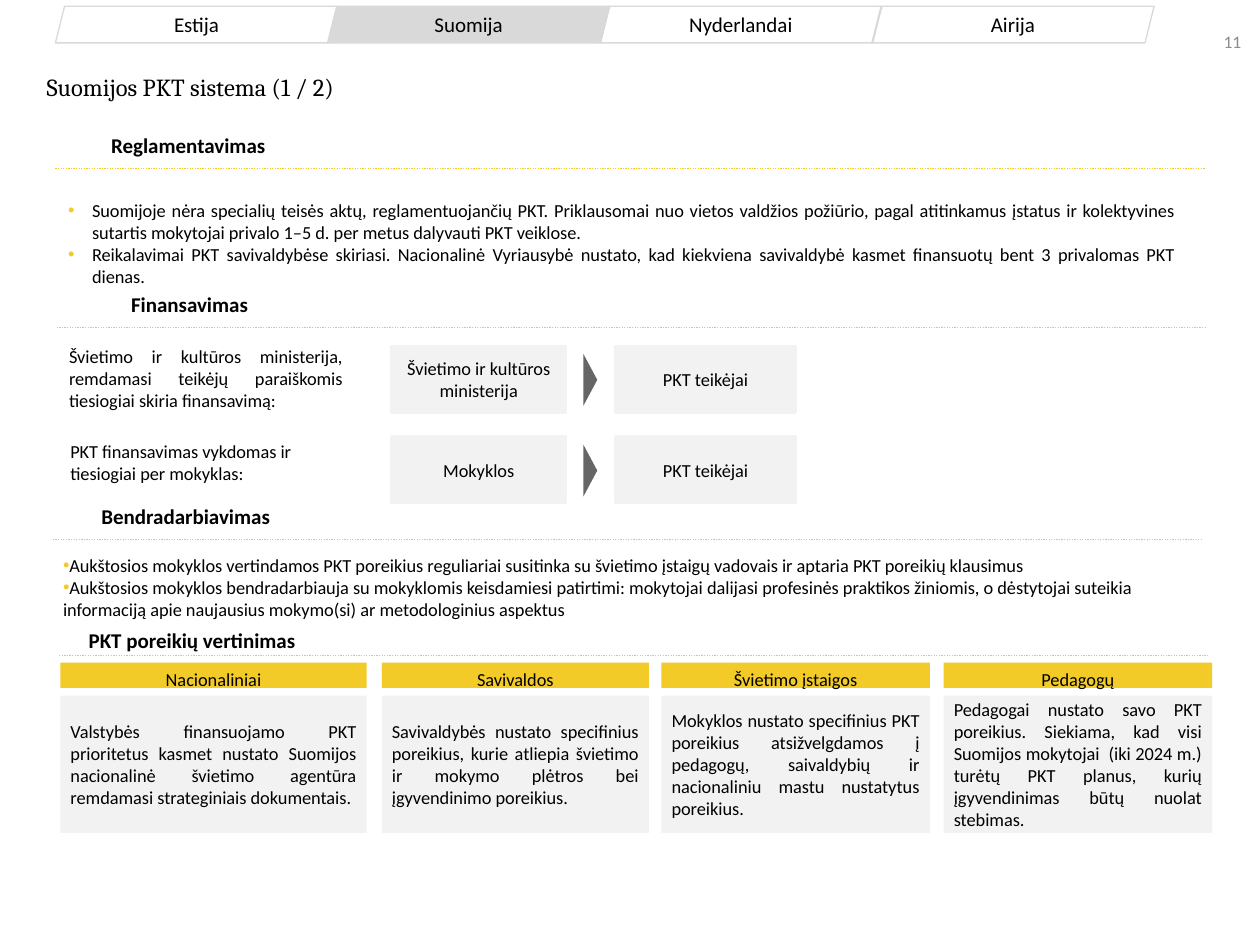
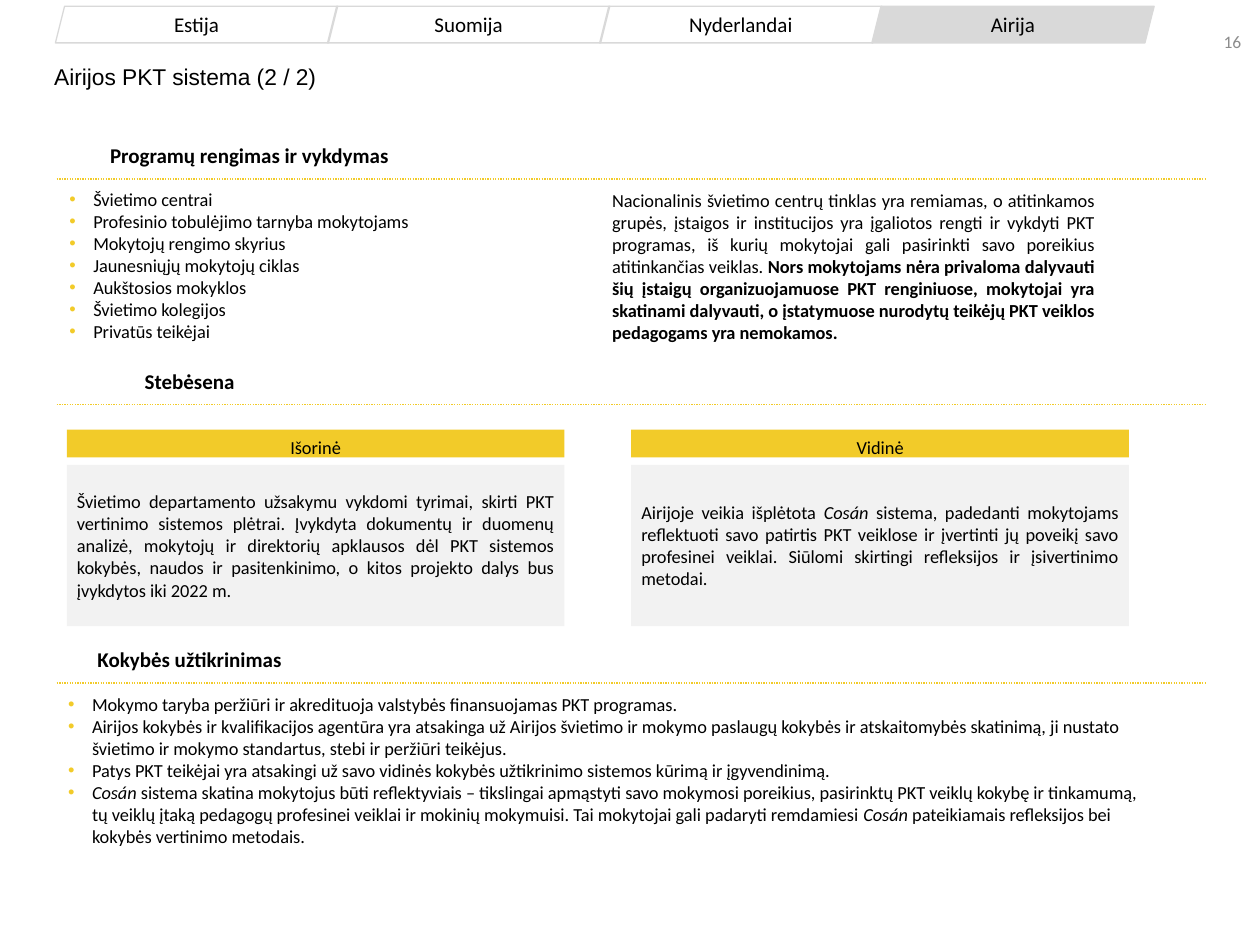
from lxml import etree
from pptx import Presentation
from pptx.dml.color import RGBColor
from pptx.enum.dml import MSO_LINE
from pptx.enum.shapes import MSO_CONNECTOR, MSO_SHAPE
from pptx.enum.text import MSO_ANCHOR, MSO_AUTO_SIZE, PP_ALIGN
from pptx.oxml.ns import qn
from pptx.util import Inches, Pt

LEFT, CENTER, RIGHT, JUSTIFY = PP_ALIGN.LEFT, PP_ALIGN.CENTER, PP_ALIGN.RIGHT, PP_ALIGN.JUSTIFY
TOP, MIDDLE = MSO_ANCHOR.TOP, MSO_ANCHOR.MIDDLE
RECT, TAB, TRIANGLE = MSO_SHAPE.RECTANGLE, MSO_SHAPE.PARALLELOGRAM, MSO_SHAPE.ISOSCELES_TRIANGLE
STRAIGHT, DOTTED, NO_FIT = MSO_CONNECTOR.STRAIGHT, MSO_LINE.ROUND_DOT, MSO_AUTO_SIZE.NONE

BLACK, WHITE, YELLOW = "000000", "FFFFFF", "F2CB29"
PALE, SILVER, GREY, DARK = "F2F2F2", "D9D9D9", "8C8C8C", "666666"
COUNTRIES = ["Estija", "Suomija", "Nyderlandai", "Airija"]


def color(value):
    return RGBColor.from_string(value)


class Deck:
    font, body_size, head_size = "Calibri", 10.5, 12

    def __init__(self):
        self.prs = Presentation()
        self.prs.slide_width, self.prs.slide_height = Inches(10), Inches(7.5)
        self.s = None

    def slide(self, number, country, title, left, top, width, font, size):
        self.s = self.prs.slides.add_slide(self.prs.slide_layouts[3])
        self.text(9.53, 0.13, 0.42, 0.4, [str(number)], RIGHT, MIDDLE, size=10, ink=GREY)
        for i, name in enumerate(COUNTRIES):
            fill = SILVER if name == country else None
            tab = self.shape(TAB, 0.44 + 2.16 * i, 0.05, 2.24, 0.29, fill, SILVER, 0.75)
            self.set_text(tab, [name], CENTER, MIDDLE, size=self.head_size)
        sp = self.place(self.s.shapes.title, left, top, width, 0.54)
        self.set_text(sp, [title], JUSTIFY, size=size, font=font)
        sp.text_frame.margin_left = 0

    def place(self, sp, left, top, width, height):
        sp.left, sp.top = Inches(left), Inches(top)
        sp.width, sp.height = Inches(width), Inches(height)
        self.s.shapes.element.append(sp.element)
        return sp

    def set_text(self, sp, paragraphs, align=LEFT, anchor=TOP, size=body_size, ink=BLACK,
                 bold=False, font=font, inset=None):
        tf = sp.text_frame
        tf.word_wrap, tf.auto_size, tf.vertical_anchor = True, NO_FIT, anchor
        if inset is not None:
            tf.margin_left = tf.margin_right = tf.margin_top = tf.margin_bottom = Inches(inset)
        for i, pieces in enumerate(paragraphs):
            p = tf.paragraphs[0] if i == 0 else tf.add_paragraph()
            p.alignment, p.space_before = align, Pt(0)
            for piece in [pieces] if isinstance(pieces, str) else pieces:
                words, style = (piece, "") if isinstance(piece, str) else piece
                r = p.add_run()
                r.text = words
                r.font.name, r.font.size = font, Pt(size)
                r.font.bold, r.font.italic = bold or style == "bold", style == "italic"
                r.font.color.rgb = color(ink)

    def shape(self, kind, left, top, width, height, fill=None, line=None, weight=0):
        sp = self.s.shapes.add_shape(kind, Inches(left), Inches(top), Inches(width), Inches(height))
        sp.shadow.inherit = False
        if fill:
            sp.fill.solid()
            sp.fill.fore_color.rgb = color(fill)
        else:
            sp.fill.background()
        if line:
            sp.line.color.rgb, sp.line.width = color(line), Pt(weight)
        else:
            sp.line.fill.background()
        return sp

    def text(self, left, top, width, height, paragraphs, *args, **style):
        sp = self.s.shapes.add_textbox(Inches(left), Inches(top), Inches(width), Inches(height))
        self.set_text(sp, paragraphs, *args, **style)

    def bullets(self, slot, left, top, width, height, items, align=LEFT, margin=0.19, hang=0.19):
        sp = self.place(self.s.placeholders[slot], left, top, width, height)
        self.set_text(sp, items, align)
        for p in sp.text_frame.paragraphs:
            pPr = p._p.get_or_add_pPr()
            pPr.set("marL", str(Inches(margin)))
            pPr.set("indent", str(-Inches(hang)))
            tint = etree.SubElement(pPr, qn("a:buClr"))
            etree.SubElement(tint, qn("a:srgbClr"), val=YELLOW)
            etree.SubElement(pPr, qn("a:buFont"), typeface="Arial")
            etree.SubElement(pPr, qn("a:buChar"), char="•")

    def section(self, title, left, top, width=2.13, height=0.43, rule=0.4):
        sp = self.shape(RECT, left, top, width, height, WHITE)
        self.set_text(sp, [title], CENTER, MIDDLE, size=self.head_size, bold=True)
        x, y = Inches(left + 0.01), Inches(top + rule)
        line = self.s.shapes.add_connector(STRAIGHT, x, y, x + Inches(9.13), y)
        line.line.color.rgb, line.line.width = color(YELLOW), Pt(0.75)
        line.line.dash_style = DOTTED
        etree.SubElement(line.element.spPr, qn("a:effectLst"))

    def card(self, left, top, width, caption_height, body_height, caption, body):
        head = self.shape(RECT, left, top, width, caption_height, YELLOW)
        self.set_text(head, [caption], CENTER, MIDDLE, inset=0.08)
        head.text_frame.paragraphs[0].line_spacing = Pt(17)
        box = self.shape(RECT, left, top + caption_height + 0.06, width, body_height, PALE)
        self.set_text(box, [body], JUSTIFY, MIDDLE, inset=0.08)

    def flow(self, top, source, target):
        for left, width, name in [(3.11, 1.38, source), (4.89, 1.42, target)]:
            sp = self.shape(RECT, left, top, width, 0.52, PALE, PALE, 2)
            self.set_text(sp, [name], CENTER, MIDDLE)
        self.shape(TRIANGLE, 4.48, top + 0.21, 0.41, 0.11, DARK).rotation = 90


def finland(deck):
    deck.slide(11, "Suomija", "Suomijos PKT sistema (1 / 2)", 0.37, 0.52, 9.18, "Cambria", 14)
    deck.section("Finansavimas", 0.44, 2.2)
    deck.section("Reglamentavimas", 0.43, 0.94)
    deck.bullets(1, 0.44, 1.53, 8.99, 0.81, [
        "Suomijoje nėra specialių teisės aktų, reglamentuojančių PKT. Priklausomai nuo vietos "
        "valdžios požiūrio, pagal atitinkamus įstatus ir kolektyvines sutartis mokytojai privalo "
        "1–5 d. per metus dalyvauti PKT veiklose. ",
        "Reikalavimai PKT savivaldybėse skiriasi. Nacionalinė Vyriausybė nustato, kad kiekviena "
        "savivaldybė kasmet finansuotų bent 3 privalomas PKT dienas. ",
    ], JUSTIFY)
    deck.text(0.45, 2.69, 2.37, 0.63, [
        "Švietimo ir kultūros ministerija, remdamasi teikėjų paraiškomis tiesiogiai skiria "
        "finansavimą:"], JUSTIFY)
    deck.flow(2.75, "Švietimo ir kultūros ministerija", "PKT teikėjai")
    deck.section("Bendradarbiavimas", 0.41, 3.88)
    deck.text(0.46, 3.44, 2.47, 0.45, ["PKT finansavimas vykdomas ir tiesiogiai per mokyklas:"])
    deck.flow(3.47, "Mokyklos", "PKT teikėjai")
    deck.bullets(2, 0.4, 4.35, 9.22, 0.63, [
        "Aukštosios mokyklos vertindamos PKT poreikius reguliariai susitinka su švietimo įstaigų "
        "vadovais ir aptaria PKT poreikių klausimus",
        "Aukštosios mokyklos bendradarbiauja su mokyklomis keisdamiesi patirtimi: mokytojai "
        "dalijasi profesinės praktikos žiniomis, o dėstytojai suteikia informaciją apie "
        "naujausius mokymo(si) ar metodologinius aspektus",
    ], margin=0, hang=0.31)
    deck.section("PKT poreikių vertinimas", 0.46, 4.98, height=0.2, rule=0.22)
    levels = [
        (0.48, 2.43, "Nacionaliniai",
         "Valstybės finansuojamo PKT prioritetus kasmet nustato Suomijos nacionalinė švietimo "
         "agentūra remdamasi strateginiais dokumentais."),
        (3.03, 2.12, "Savivaldos",
         "Savivaldybės nustato specifinius poreikius, kurie atliepia švietimo ir mokymo plėtros "
         "bei įgyvendinimo poreikius."),
        (5.25, 2.13, "Švietimo įstaigos",
         "Mokyklos nustato specifinius PKT poreikius atsižvelgdamos į pedagogų, saivaldybių ir "
         "nacionaliniu mastu nustatytus poreikius."),
        (7.49, 2.13, "Pedagogų",
         "Pedagogai nustato savo PKT poreikius. Siekiama, kad visi Suomijos mokytojai  (iki "
         "2024 m.) turėtų PKT planus, kurių įgyvendinimas būtų nuolat stebimas."),
    ]
    for left, width, caption, body in levels:
        deck.card(left, 5.26, width, 0.2, 1.09, caption, body)


def ireland(deck):
    cosan = ("Cosán", "italic")
    deck.slide(16, "Airija", "Airijos PKT sistema (2 / 2)", 0.43, 0.45, 8.74, "Arial", 13)
    deck.section("Stebėsena", 0.44, 2.81)
    deck.section("Programų rengimas ir vykdymas", 0.44, 1.02, width=3.08)
    deck.section("Kokybės užtikrinimas", 0.44, 5.02)
    deck.bullets(1, 0.45, 1.44, 3.45, 1.34, [
        "Švietimo centrai",
        "Profesinio tobulėjimo tarnyba mokytojams",
        "Mokytojų rengimo skyrius",
        "Jaunesniųjų mokytojų ciklas",
        "Aukštosios mokyklos",
        "Švietimo kolegijos",
        "Privatūs teikėjai",
    ])
    deck.text(4.76, 1.45, 4.03, 1.34, [[
        "Nacionalinis švietimo centrų tinklas yra remiamas, o atitinkamos grupės, įstaigos ir "
        "institucijos yra įgaliotos rengti ir vykdyti PKT programas, iš kurių mokytojai gali "
        "pasirinkti savo poreikius atitinkančias veiklas. ",
        ("Nors mokytojams nėra privaloma dalyvauti šių įstaigų organizuojamuose PKT renginiuose, "
         "mokytojai yra skatinami dalyvauti, o įstatymuose nurodytų teikėjų PKT veiklos "
         "pedagogams yra nemokamos.", "bold"),
    ]], JUSTIFY)
    deck.card(0.53, 3.41, 3.95, 0.22, 1.28, "Išorinė",
              "Švietimo departamento užsakymu vykdomi tyrimai, skirti PKT vertinimo sistemos "
              "plėtrai. Įvykdyta dokumentų ir duomenų analizė, mokytojų ir direktorių apklausos "
              "dėl PKT sistemos kokybės, naudos ir pasitenkinimo, o kitos projekto dalys bus "
              "įvykdytos iki 2022 m.")
    deck.card(5.01, 3.41, 3.95, 0.22, 1.28, "Vidinė", [
        "Airijoje veikia išplėtota ", cosan,
        " sistema, padedanti mokytojams reflektuoti savo patirtis PKT veiklose ir įvertinti jų "
        "poveikį savo profesinei veiklai. Siūlomi skirtingi refleksijos ir įsivertinimo metodai. ",
    ])
    deck.bullets(2, 0.44, 5.45, 8.79, 1.34, [
        "Mokymo taryba peržiūri ir akredituoja valstybės finansuojamas PKT programas.",
        "Airijos kokybės ir kvalifikacijos agentūra yra atsakinga už Airijos švietimo ir mokymo "
        "paslaugų kokybės ir atskaitomybės skatinimą, ji nustato švietimo ir mokymo standartus, "
        "stebi ir peržiūri teikėjus.",
        "Patys PKT teikėjai yra atsakingi už savo vidinės kokybės užtikrinimo sistemos kūrimą ir "
        "įgyvendinimą.",
        [cosan,
         " sistema skatina mokytojus būti reflektyviais – tikslingai apmąstyti savo mokymosi "
         "poreikius, pasirinktų PKT veiklų kokybę ir tinkamumą, tų veiklų įtaką pedagogų "
         "profesinei veiklai ir mokinių mokymuisi. Tai mokytojai gali padaryti remdamiesi ",
         cosan, " pateikiamais refleksijos bei kokybės vertinimo metodais."],
    ])


def main():
    deck = Deck()
    finland(deck)
    ireland(deck)
    deck.prs.save("out.pptx")


if __name__ == "__main__":
    main()
